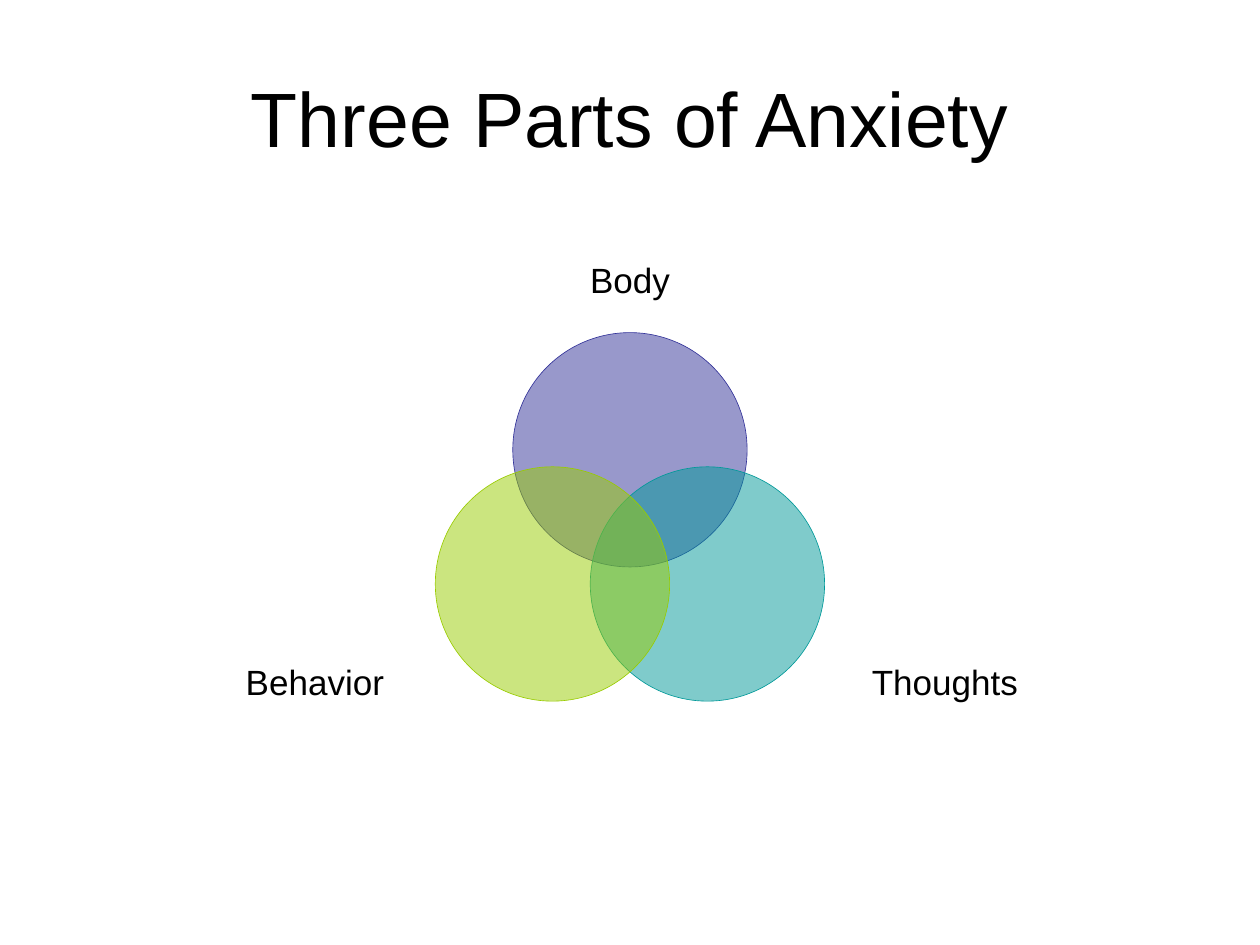
import math

import pptx
import pptx.dml.color
import pptx.enum.shapes
import pptx.enum.text
import pptx.oxml
import pptx.oxml.ns
import pptx.util
from pptx.util import Inches

COLORS = {
    "text": "000000",
    "body": "333399",
    "thoughts": "009999",
    "behavior": "99CC00",
}
FONT = "Arial"


def rgb(name):
    return pptx.dml.color.RGBColor.from_string(COLORS[name])


def write_text(shape, text, size):
    """Put one centred line of text in a shape."""
    frame = shape.text_frame
    frame.vertical_anchor = pptx.enum.text.MSO_ANCHOR.MIDDLE
    para = frame.paragraphs[0]
    para.text = text
    para.alignment = pptx.enum.text.PP_ALIGN.CENTER
    para.font.name = FONT
    para.font.size = pptx.util.Pt(size)
    para.font.color.rgb = rgb("text")


def place_title(page, left, top, width, height):
    title = page.shapes.title
    title.left, title.top = Inches(left), Inches(top)
    title.width, title.height = Inches(width), Inches(height)
    write_text(title, "Three Parts of Anxiety", 44)


def add_circle(page, center_x, center_y, size, color):
    circle = page.shapes.add_shape(
        pptx.enum.shapes.MSO_SHAPE.OVAL,
        Inches(center_x - size / 2), Inches(center_y - size / 2),
        Inches(size), Inches(size))
    circle.shadow.inherit = False
    circle.fill.solid()
    circle.fill.fore_color.rgb = rgb(color)
    circle.line.color.rgb = rgb(color)
    circle.line.width = pptx.util.Pt(0.37)
    # Half-transparent fill lets the overlaps show
    fill_color = circle.fill._xPr.find(
        "/".join(map(pptx.oxml.ns.qn, ("a:solidFill", "a:srgbClr"))))
    alpha = pptx.oxml.parse_xml(
        f'<a:alpha {pptx.oxml.ns.nsdecls("a")} val="50000"/>')
    fill_color.append(alpha)


def add_label(page, text, left, top, width, height):
    label = page.shapes.add_textbox(
        Inches(left), Inches(top), Inches(width), Inches(height))
    frame = label.text_frame
    frame.margin_left = frame.margin_right = 0
    frame.margin_top = frame.margin_bottom = 0
    frame.word_wrap = False
    write_text(label, text, 20)


def place_venn(page, left, top, width, height):
    """Three circles around a shared centre, each with an outer label."""
    circle_size, orbit = 1.86, 0.71
    label_width, label_height = 1.86, 0.46
    center_x, center_y = left + width / 2, top + 2.29
    right = left + width - label_width
    bottom = top + height - label_height
    parts = [
        ("Body", "body", -90, center_x - label_width / 2, top),
        ("Thoughts", "thoughts", 30, right, bottom),
        ("Behavior", "behavior", 150, left, bottom),
    ]
    for text, color, degrees, label_left, label_top in parts:
        angle = math.radians(degrees)
        add_circle(page, center_x + orbit * math.cos(angle),
                   center_y + orbit * math.sin(angle), circle_size, color)
        add_label(page, text, label_left, label_top, label_width, label_height)


def main():
    deck = pptx.Presentation()
    deck.slide_width, deck.slide_height = Inches(10), Inches(7.5)
    page = deck.slides.add_slide(deck.slide_layouts.get_by_name("Title Only"))
    place_title(page, 0.5, 0.3, 9, 1.25)
    place_venn(page, 1.57, 1.99, 6.86, 3.65)
    deck.save("out.pptx")


if __name__ == "__main__":
    main()
